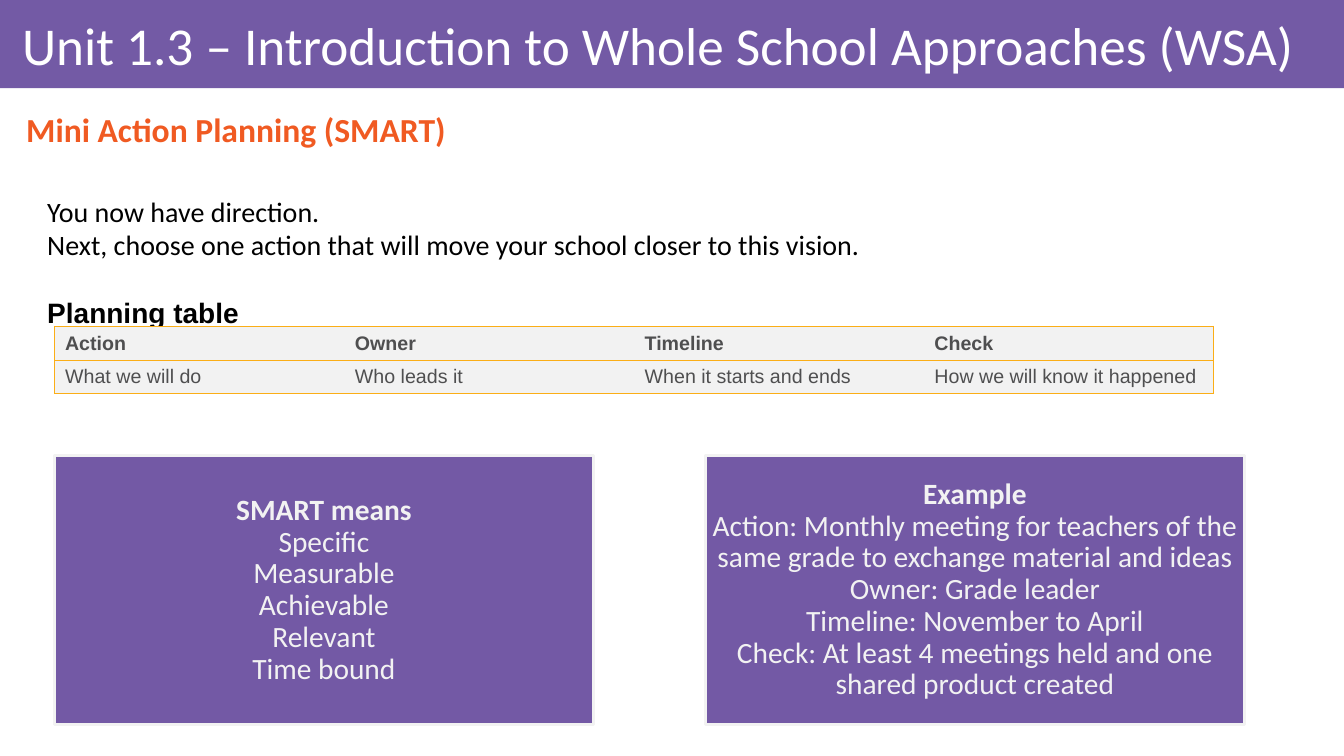
from lxml.etree import SubElement
from pptx import Presentation
from pptx.dml.color import RGBColor
from pptx.enum.shapes import MSO_SHAPE as Shape
from pptx.enum.text import MSO_ANCHOR as Anchor, MSO_AUTO_SIZE as AutoSize, PP_ALIGN as Align
from pptx.oxml.ns import qn
from pptx.util import Pt

PX = 9525
WIDTH, HEIGHT = 1280, 720
BANNER, CARD, PALE = "735AA5", "7359A5", "F2F2F2"
ORANGE, AMBER, GREY, BLACK, WHITE = "F05A22", "FBAE17", "4F4F50", "000000", "FFFFFF"

PLAN = [
    ["Action", "Owner", "Timeline", "Check"],
    ["What we will do", "Who leads it", "When it starts and ends", "How we will know it happened"],
]
CARDS = [
    ("SMART means", ["Specific", "Measurable", "Achievable", "Relevant", "Time bound"]),
    ("Example", [
        "Action: Monthly meeting for teachers of the same grade to exchange material and ideas",
        "Owner: Grade leader",
        "Timeline: November to April",
        "Check: At least 4 meetings held and one shared product created",
    ]),
]


def px(*lengths):
    """Turn pixel lengths into EMU."""
    return [length * PX for length in lengths]


def color(hex_code):
    """Turn a hex string into a colour."""
    return RGBColor.from_string(hex_code)


def write(paragraph, text, size, ink, bold=False, font="Calibri"):
    """Add one formatted run to a paragraph."""
    run = paragraph.add_run()
    run.text = text
    run.font.name, run.font.size, run.font.bold = font, Pt(size), bold
    run.font.color.rgb = color(ink)


def set_frame(frame, anchor, *insets):
    """Wrap a text frame and set its anchor and insets; return its first paragraph."""
    frame.word_wrap = True
    frame.auto_size = AutoSize.NONE
    frame.vertical_anchor = anchor
    frame.margin_left, frame.margin_top, frame.margin_right, frame.margin_bottom = px(*insets)
    return frame.paragraphs[0]


def add_box(slide, box, fill, line=None):
    """Add a flat rectangle with an optional outline."""
    rect = slide.shapes.add_shape(Shape.RECTANGLE, *px(*box))
    rect.shadow.inherit = False
    rect.fill.solid()
    rect.fill.fore_color.rgb = color(fill)
    if line:
        rect.line.color.rgb = color(line)
        rect.line.width = Pt(2)
    else:
        rect.line.fill.background()
    return rect


def add_header(slide, x, y, w, h):
    """Place the banner and the slide title on it."""
    banner = add_box(slide, (x, y, w, h), BANNER)
    title = slide.shapes.title
    title._element.addprevious(banner._element)
    title.left, title.top, title.width, title.height = px(x + 11, y + 8, w - 26, h - 8)
    heading = set_frame(title.text_frame, Anchor.MIDDLE, 10, 6, 6, 6)
    heading.alignment = Align.LEFT
    heading.line_spacing = 0.9
    write(heading, "Unit 1.3 – Introduction to Whole School Approaches (WSA)", 38, WHITE)


def add_subtitle(slide, *box):
    """Place the orange section heading."""
    frame = slide.shapes.add_textbox(*px(*box)).text_frame
    subtitle = set_frame(frame, Anchor.MIDDLE, 10, 5, 10, 5)
    subtitle.line_spacing = 0.9
    write(subtitle, "Mini Action Planning (SMART)", 24, ORANGE, True)


def add_intro(slide, *box):
    """Place the introduction and the table heading."""
    frame = slide.shapes.add_textbox(*px(*box)).text_frame
    intro = set_frame(frame, Anchor.TOP, 10, 5, 10, 5)
    write(intro, "You now have direction.", 20, BLACK)
    intro.add_line_break()
    write(intro, "Next, choose one action that will move your school closer to this vision.", 20, BLACK)
    table_heading = frame.add_paragraph()
    table_heading.space_before = Pt(24)
    write(table_heading, "Planning table", 20, BLACK, True, "Arial")


def set_borders(cell, amber_sides):
    """Draw amber borders on the given sides and none on the others."""
    properties = cell._tc.get_or_add_tcPr()
    for side in "LRTB":
        border = SubElement(properties, qn(f"a:ln{side}"), w=str(Pt(1)))
        if side in amber_sides:
            SubElement(SubElement(border, qn("a:solidFill")), qn("a:srgbClr"), val=AMBER)
        else:
            SubElement(border, qn("a:noFill"))


def add_plan(slide, x, y, w, h):
    """Place the planning table with equal columns and rows."""
    columns = len(PLAN[0])
    table = slide.shapes.add_table(len(PLAN), columns, *px(x, y, w, h)).table
    table.first_row = table.horz_banding = False
    for r, entries in enumerate(PLAN):
        for c, entry in enumerate(entries):
            cell = table.cell(r, c)
            set_borders(cell, "TB" + "L" * (c == 0) + "R" * (c == columns - 1))
            cell.fill.solid()
            cell.fill.fore_color.rgb = color(PALE)
            cell.vertical_anchor = Anchor.MIDDLE
            cell.margin_left, cell.margin_right = px(10, 10)
            cell.margin_top, cell.margin_bottom = px(5, 5)
            write(cell.text_frame.paragraphs[0], entry, 14, GREY, r == 0, "Arial")


def add_card(slide, heading, lines, *box):
    """Place a purple card with a bold heading above its lines."""
    card = add_box(slide, box, CARD, PALE)
    body = set_frame(card.text_frame, Anchor.MIDDLE, 1, 1, 1, 1)
    body.alignment = Align.CENTER
    body.line_spacing = 0.9
    write(body, heading, 21, PALE, True)
    for line in lines:
        body.add_line_break()
        write(body, line, 21, PALE)


def main():
    """Build the slide and save it."""
    deck = Presentation()
    deck.slide_width, deck.slide_height = px(WIDTH, HEIGHT)
    slide = deck.slides.add_slide(deck.slide_layouts.get_by_name("Title Only"))
    add_header(slide, 0, 0, WIDTH, 84)
    add_subtitle(slide, 15, 96, 1230, 58)
    add_intro(slide, 35, 180, 1230, 139)
    add_plan(slide, 52, 311, 1104, 64)
    for i, (heading, lines) in enumerate(CARDS):
        add_card(slide, heading, lines, 52 + i * 620, 434, 513, 256)
    deck.save("out.pptx")


if __name__ == "__main__":
    main()
